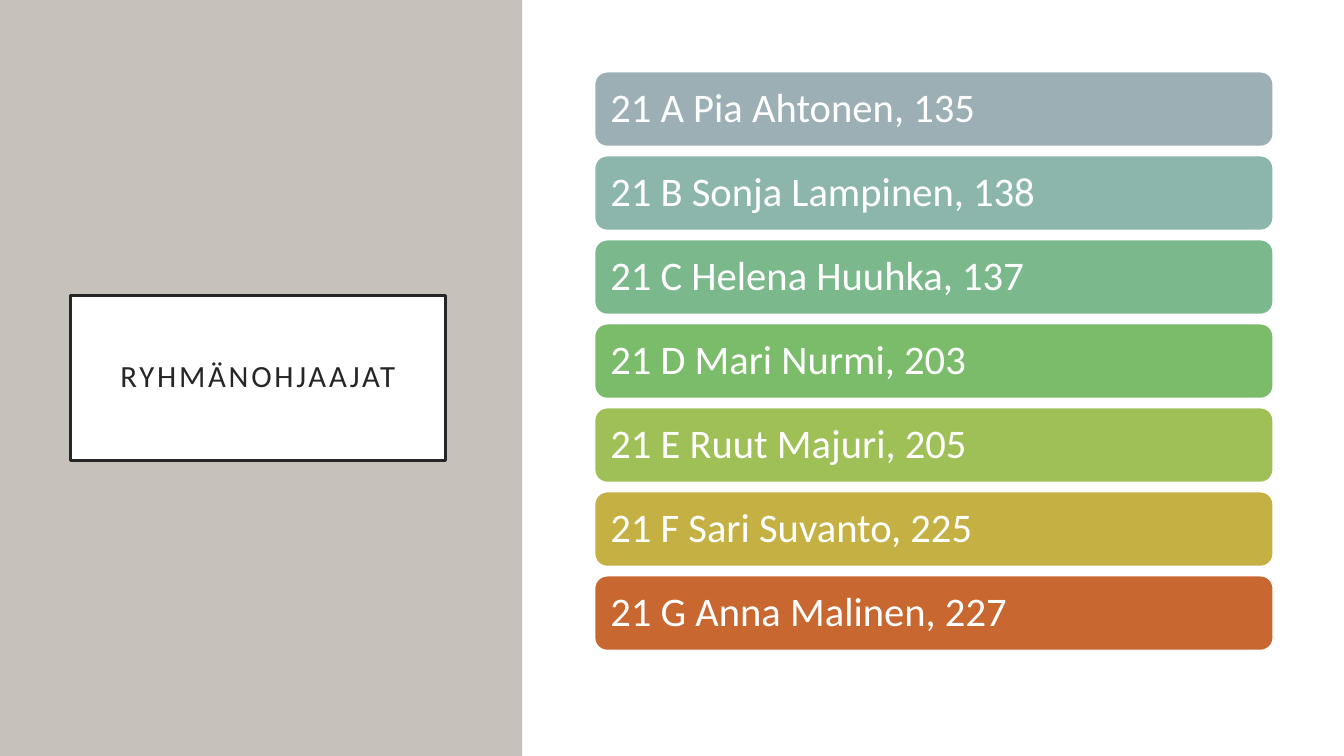
from pptx import Presentation
from pptx.dml.color import RGBColor
from pptx.enum import shapes, text
from pptx.util import Pt

COLORS = {"panel": "C6C1BA", "paper": "FFFFFF", "ink": "262626"}
ADVISORS = [
    ("21 A Pia Ahtonen, 135", "9BAFB5"),
    ("21 B Sonja Lampinen, 138", "8CB6AC"),
    ("21 C Helena Huuhka, 137", "7BB88C"),
    ("21 D Mari Nurmi, 203", "7ABC69"),
    ("21 E Ruut Majuri, 205", "9FC057"),
    ("21 F Sari Suvanto, 225", "C5B043"),
    ("21 G Anna Malinen, 227", "C96731"),
]
BAR_TOP, BAR_PITCH = 51.3, 60


class SlideBuilder:
    font = "Calibri"

    def __init__(self, slide):
        self.slide = slide

    def paint(self, shape, fill, line=None, width=1):
        shape.fill.solid()
        shape.fill.fore_color.rgb = RGBColor.from_string(fill)
        if line:
            shape.line.color.rgb = RGBColor.from_string(line)
            shape.line.width = Pt(width)
        else:
            shape.line.fill.background()

    def label(self, shape, words, size, color, align, inset):
        frame = shape.text_frame
        frame.word_wrap = True
        frame.auto_size = text.MSO_AUTO_SIZE.NONE
        frame.vertical_anchor = text.MSO_ANCHOR.MIDDLE
        frame.margin_left = frame.margin_right = Pt(inset)
        frame.margin_top = frame.margin_bottom = Pt(inset)
        paragraph = frame.paragraphs[0]
        paragraph.alignment = align
        paragraph.line_spacing = 0.9
        run = paragraph.add_run()
        run.text = words
        run.font.name = self.font
        run.font.size = Pt(size)
        run.font.color.rgb = RGBColor.from_string(color)

    def panel(self, left, width, fill):
        """Add a full-height colour field behind the title."""
        field = self.slide.shapes.add_shape(
            shapes.MSO_SHAPE.RECTANGLE, Pt(left), 0, Pt(width), Pt(540))
        field.shadow.inherit = False
        self.paint(field, fill)
        self.slide.shapes.title.element.addprevious(field.element)

    def title(self, words, left, top, width, height):
        heading = self.slide.shapes.title
        heading.left, heading.top = Pt(left), Pt(top)
        heading.width, heading.height = Pt(width), Pt(height)
        self.paint(heading, COLORS["paper"], COLORS["ink"], 2.5)
        self.label(heading, words, 22, COLORS["ink"], text.PP_ALIGN.CENTER, 14.4)
        for run_style in heading.element.xpath(".//a:rPr"):
            run_style.set("spc", "200")

    def bar(self, words, top, fill):
        bar = self.slide.shapes.add_shape(
            shapes.MSO_SHAPE.ROUNDED_RECTANGLE, Pt(424.8), Pt(top), Pt(484.6), Pt(53.3))
        bar.shadow.inherit = False
        self.paint(bar, fill, COLORS["paper"])
        self.label(bar, words, 29, COLORS["paper"], text.PP_ALIGN.LEFT, 8.6)


def main():
    deck = Presentation()
    deck.slide_width, deck.slide_height = Pt(960), Pt(540)
    builder = SlideBuilder(deck.slides.add_slide(deck.slide_layouts[5]))
    builder.panel(0, 373, COLORS["panel"])
    builder.panel(374, 586, COLORS["paper"])
    builder.title("RYHMÄNOHJAAJAT", 50.4, 211, 267.8, 118)
    for row, (advisor, fill) in enumerate(ADVISORS):
        builder.bar(advisor, BAR_TOP + row * BAR_PITCH, fill)
    deck.save("out.pptx")


if __name__ == "__main__":
    main()
